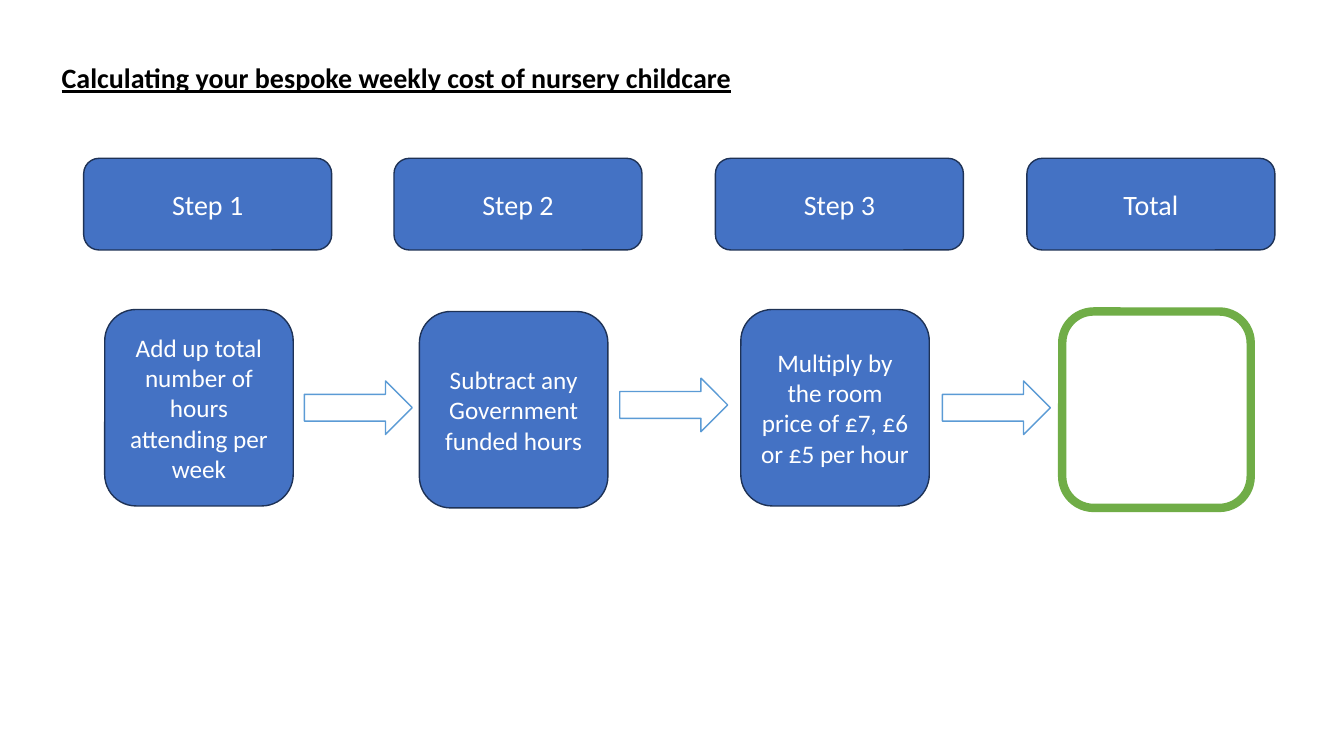
from dataclasses import dataclass

from pptx import Presentation
from pptx.dml.color import RGBColor
from pptx.enum.shapes import MSO_SHAPE
from pptx.enum.text import MSO_ANCHOR, MSO_AUTO_SIZE, PP_ALIGN
from pptx.util import Cm, Pt

ROUNDED, ARROW = MSO_SHAPE.ROUNDED_RECTANGLE, MSO_SHAPE.RIGHT_ARROW
LEFT, CENTER = PP_ALIGN.LEFT, PP_ALIGN.CENTER
TOP, MIDDLE = MSO_ANCHOR.TOP, MSO_ANCHOR.MIDDLE
FIT_SHAPE = MSO_AUTO_SIZE.SHAPE_TO_FIT_TEXT

COLORS = {
    "white": "FFFFFF",
    "black": "000000",
    "blue": "4472C4",
    "navy": "1E3256",
    "sky": "5B9BD5",
    "green": "70AD47",
}
FONT = "Calibri"

# Sizes in centimetres
HEADER_TOP, HEADER_SIZE = 3.99, (6.25, 2.31)
CARD_SIZE = (4.75, 4.95)
ARROW_SIZE = (2.72, 1.35)


@dataclass
class Step:
    header: str
    header_left: float
    card_left: float
    card_top: float
    text: str = ""


@dataclass
class Arrow:
    left: float
    top: float


STEPS = [
    Step("Step 1", 2.11, 2.64, 7.8, "Add up total number of hours attending per week"),
    Step("Step 2", 9.93, 10.57, 7.85, "Subtract any Government funded hours"),
    Step("Step 3", 18.03, 18.67, 7.8, "Multiply by the room price of £7, £6 or £5 per hour"),
    Step("Total", 25.88, 26.77, 7.85),
]
ARROWS = [Arrow(7.67, 9.6), Arrow(15.62, 9.53), Arrow(23.75, 9.6)]


def rgb(name: str) -> RGBColor:
    return RGBColor.from_string(COLORS[name])


def write(s, text: str, size: int = 20, color: str = "white", align=CENTER,
          anchor=MIDDLE, bold: bool = False, underline: bool = False,
          wrap: bool = True) -> None:
    tf = s.text_frame
    tf.word_wrap = wrap
    tf.vertical_anchor = anchor
    p = tf.paragraphs[0]
    p.alignment = align
    r = p.add_run()
    r.text = text
    r.font.name, r.font.size = FONT, Pt(size)
    r.font.bold, r.font.underline = bold, underline
    r.font.color.rgb = rgb(color)


def add_box(slide, kind, left: float, top: float, size: tuple[float, float],
            fill: str = "blue", line: str = "navy", width: float = 1):
    s = slide.shapes.add_shape(kind, Cm(left), Cm(top), *map(Cm, size))
    s.shadow.inherit = False
    s.fill.solid()
    s.fill.fore_color.rgb = rgb(fill)
    s.line.color.rgb = rgb(line)
    s.line.width = Pt(width)
    return s


def main() -> None:
    prs = Presentation()
    prs.slide_width, prs.slide_height = Cm(33.87), Cm(19.05)
    slide = prs.slides.add_slide(prs.slide_layouts[5])

    # Title
    title = slide.shapes.title
    title.left, title.top, title.width, title.height = map(Cm, (1.3, 1.4, 17.53, 1.12))
    write(title, "Calculating your bespoke weekly cost of nursery childcare",
          color="black", align=LEFT, anchor=TOP, bold=True, underline=True, wrap=False)
    title.text_frame.auto_size = FIT_SHAPE

    # Headers with their cards; the total stays an empty frame
    for step in STEPS:
        header = add_box(slide, ROUNDED, step.header_left, HEADER_TOP, HEADER_SIZE)
        write(header, step.header)
        if step.text:
            card = add_box(slide, ROUNDED, step.card_left, step.card_top, CARD_SIZE)
            write(card, step.text, size=18)
        else:
            add_box(slide, ROUNDED, step.card_left, step.card_top, CARD_SIZE,
                    fill="white", line="green", width=6)

    # Arrows between the cards
    for arrow in ARROWS:
        add_box(slide, ARROW, arrow.left, arrow.top, ARROW_SIZE, fill="white", line="sky")

    prs.save("out.pptx")


if __name__ == "__main__":
    main()
